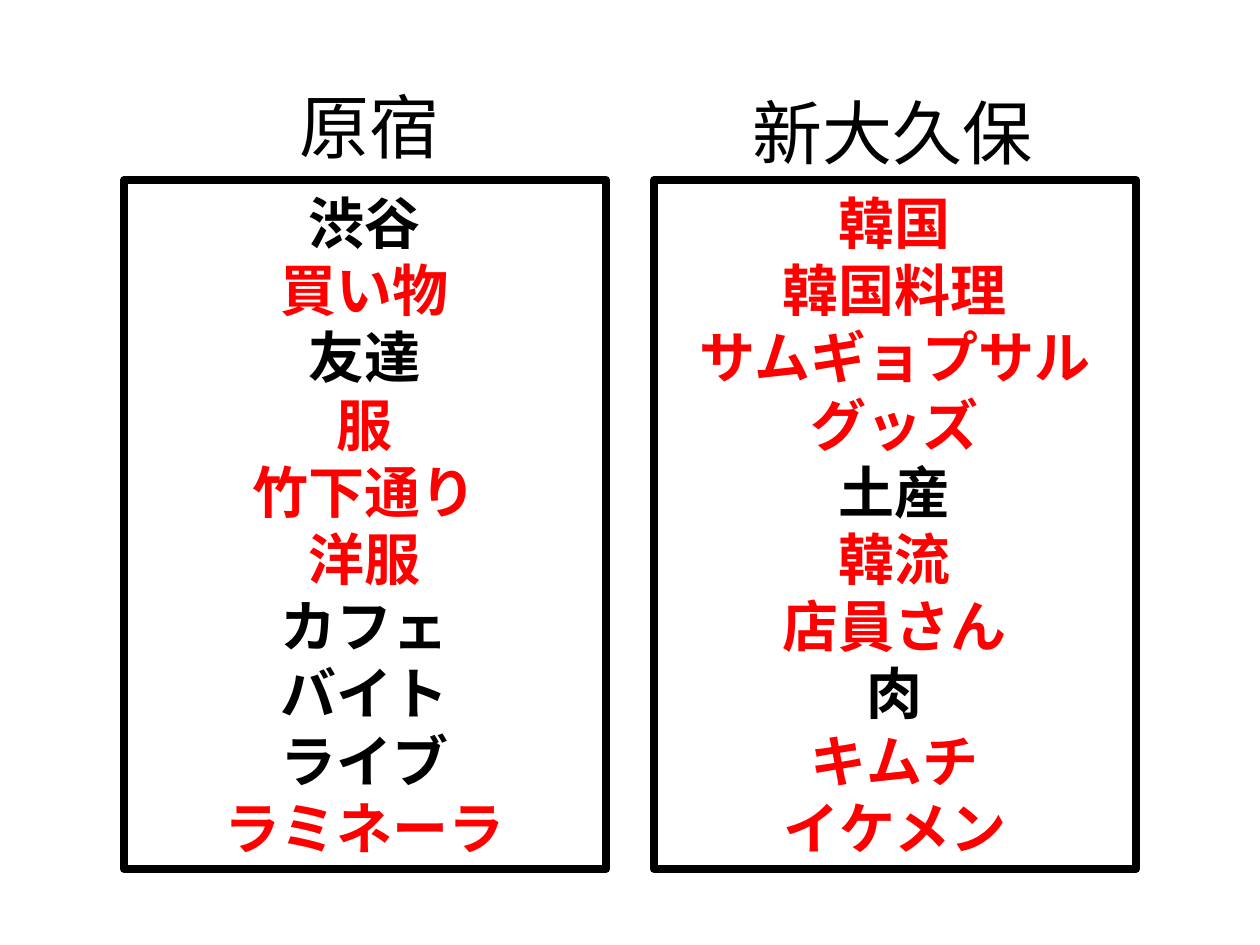
from pptx import Presentation, util as u
from pptx.dml.color import RGBColor
from pptx.enum import text
from pptx.oxml.ns import qn
from lxml import etree

PX = 914400 / 126
BLACK, RED = "000000", "FF0000"


def color(value):
    return RGBColor.from_string(value)


def place(shape, box, anchor):
    """Move a placeholder to a box in px and set up its text frame."""
    shape.left, shape.top, shape.width, shape.height = (u.Emu(round(n * PX)) for n in box)
    frame = shape.text_frame
    frame.word_wrap = True
    frame.auto_size = text.MSO_AUTO_SIZE.NONE
    frame.vertical_anchor = anchor
    return frame


def format_paragraph(paragraph, size, bold, value, align):
    """Remove the bullet and indent, then format the paragraph and its runs."""
    paragraph.alignment = align
    paragraph.space_before = u.Pt(0)
    paragraph.line_spacing = 1.0
    properties = paragraph._p.get_or_add_pPr()
    properties.set("marL", "0")
    properties.set("indent", "0")
    etree.SubElement(properties, qn("a:buNone"))
    for run in paragraph.runs:
        run.font.name = "Calibri"
        run.font.size = u.Pt(size)
        run.font.bold = bold
        run.font.color.rgb = color(value)


presentation = Presentation()
presentation.slide_width = u.Inches(10)
presentation.slide_height = u.Inches(7.5)

# Comparison layout: two headings, each above a list; no overall title
slide = presentation.slides.add_slide(presentation.slide_layouts[4])
title = slide.shapes.title._element
title.getparent().remove(title)
placeholders = {shape.placeholder_format.idx: shape for shape in slide.placeholders}

columns = [
    {
        "heading": "原宿", "heading_box": (227, 77, 285, 97),
        "align": text.PP_ALIGN.CENTER, "left": 124,
        "words": ["渋谷", "買い物", "友達", "服", "竹下通り",
                  "洋服", "カフェ", "バイト", "ライブ", "ラミネーラ"],
        "black": {"渋谷", "友達", "カフェ", "バイト", "ライブ"},
    },
    {
        "heading": "新大久保", "heading_box": (740, 83, 377, 97),
        "align": text.PP_ALIGN.LEFT, "left": 654,
        "words": ["韓国", "韓国料理", "サムギョプサル", "グッズ", "土産",
                  "韓流", "店員さん", "肉", "キムチ", "イケメン"],
        "black": {"土産", "肉"},
    },
]

for index, column in enumerate(columns):
    # Heading
    heading = placeholders[2 * index + 1]
    frame = place(heading, column["heading_box"], text.MSO_ANCHOR.TOP)
    frame.text = column["heading"]
    format_paragraph(frame.paragraphs[0], 40, False, BLACK, column["align"])

    # Framed word list
    word_list = placeholders[2 * index + 2]
    frame = place(word_list, (column["left"], 180, 482, 689), text.MSO_ANCHOR.MIDDLE)
    word_list.line.color.rgb = color(BLACK)
    word_list.line.width = u.Pt(4.5)
    etree.SubElement(word_list.line._get_or_add_ln(), qn("a:round"))
    frame.text = "\n".join(column["words"])
    for paragraph in frame.paragraphs:
        value = BLACK if paragraph.text in column["black"] else RED
        format_paragraph(paragraph, 32, True, value, text.PP_ALIGN.CENTER)

presentation.save("out.pptx")
